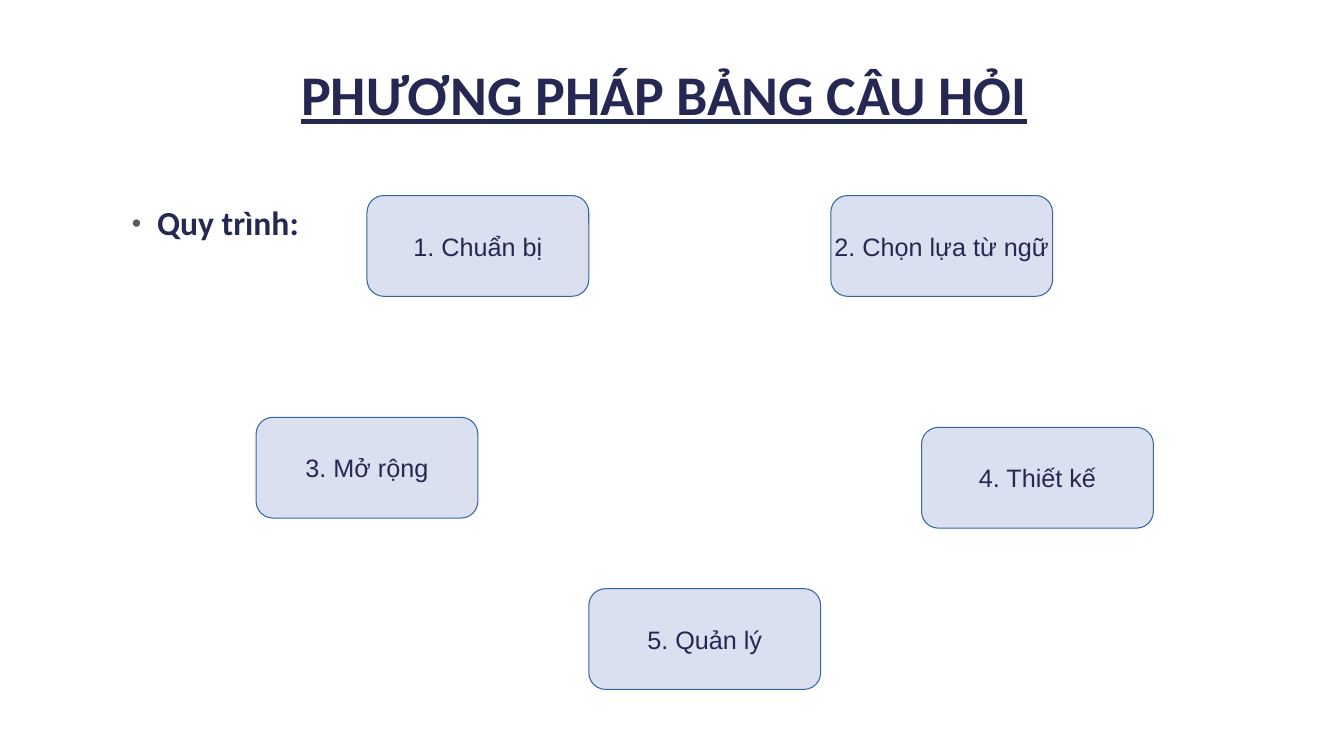
from lxml.etree import SubElement
from pptx import Presentation
from pptx.dml.color import RGBColor
from pptx.enum.shapes import MSO_SHAPE
from pptx.enum.text import MSO_ANCHOR, PP_ALIGN
from pptx.oxml.ns import qn
from pptx.util import Inches, Pt

WIDTH, HEIGHT = 13.33, 7.5
CELL, EDGE = 0.1, 0.04
NAVY, PALE, BLUE, GREY = "242852", "DAE0EF", "3465A4", "595959"
STEPS = [
    ("1. Chuẩn bị", 36, 19, 22),
    ("2. Chọn lựa từ ngữ", 82, 19, 22),
    ("3. Mở rộng", 25, 41, 22),
    ("4. Thiết kế", 91, 42, 23),
    ("5. Quản lý", 58, 58, 23),
]


def color(code):
    return RGBColor.from_string(code)


def style(part, face, size, bold=False, under=False):
    for run in part.runs:
        font = run.font
        font.name, font.size = face, Pt(size)
        font.bold, font.underline = bold, under
        font.color.rgb = color(NAVY)


def add_text(slide, text, left, top, width, height, size, space, under=False):
    box = slide.shapes.add_textbox(
        Inches(left * WIDTH), Inches(top * HEIGHT),
        Inches(width * WIDTH), Inches(height * HEIGHT))
    frame = box.text_frame
    frame.word_wrap = True
    frame.text = text
    part = frame.paragraphs[0]
    part.line_spacing = space
    style(part, "Calibri", size, True, under)
    return frame


def add_bullet(part):
    props = part._p.get_or_add_pPr()
    props.set("marL", str(Inches(0.3)))
    props.set("indent", str(Inches(-0.25)))
    tint = SubElement(props, qn("a:buClr"))
    SubElement(tint, qn("a:srgbClr"), val=GREY)
    SubElement(props, qn("a:buSzPct"), val="80000")
    SubElement(props, qn("a:buFont"), typeface="Arial")
    SubElement(props, qn("a:buChar"), char="•")


def add_step(slide, text, col, row, span):
    left, top = (Inches(EDGE + CELL * n) for n in (col, row))
    box = slide.shapes.add_shape(
        MSO_SHAPE.ROUNDED_RECTANGLE, left, top,
        Inches(CELL * span), Inches(CELL * 10))
    box.shadow.inherit = False
    box.fill.solid()
    box.fill.fore_color.rgb = color(PALE)
    box.line.color.rgb = color(BLUE)
    box.line.width = Pt(0.75)
    frame = box.text_frame
    frame.word_wrap = False
    frame.vertical_anchor = MSO_ANCHOR.MIDDLE
    frame.text = text
    part = frame.paragraphs[0]
    part.alignment = PP_ALIGN.CENTER
    style(part, "Arial", 18)


def main():
    deck = Presentation()
    deck.slide_width, deck.slide_height = Inches(WIDTH), Inches(HEIGHT)
    slide = deck.slides.add_slide(deck.slide_layouts[6])
    title = add_text(slide, "PHƯƠNG PHÁP BẢNG CÂU HỎI",
                     0.087, 0.077, 0.814, 0.097, 40, 0.8, True)
    title.vertical_anchor = MSO_ANCHOR.BOTTOM
    title.paragraphs[0].alignment = PP_ALIGN.CENTER
    body = add_text(slide, "Quy trình:", 0.087, 0.267, 0.713, 0.611, 24, 0.9)
    add_bullet(body.paragraphs[0])
    for step in STEPS:
        add_step(slide, *step)
    deck.save("out.pptx")


if __name__ == "__main__":
    main()
